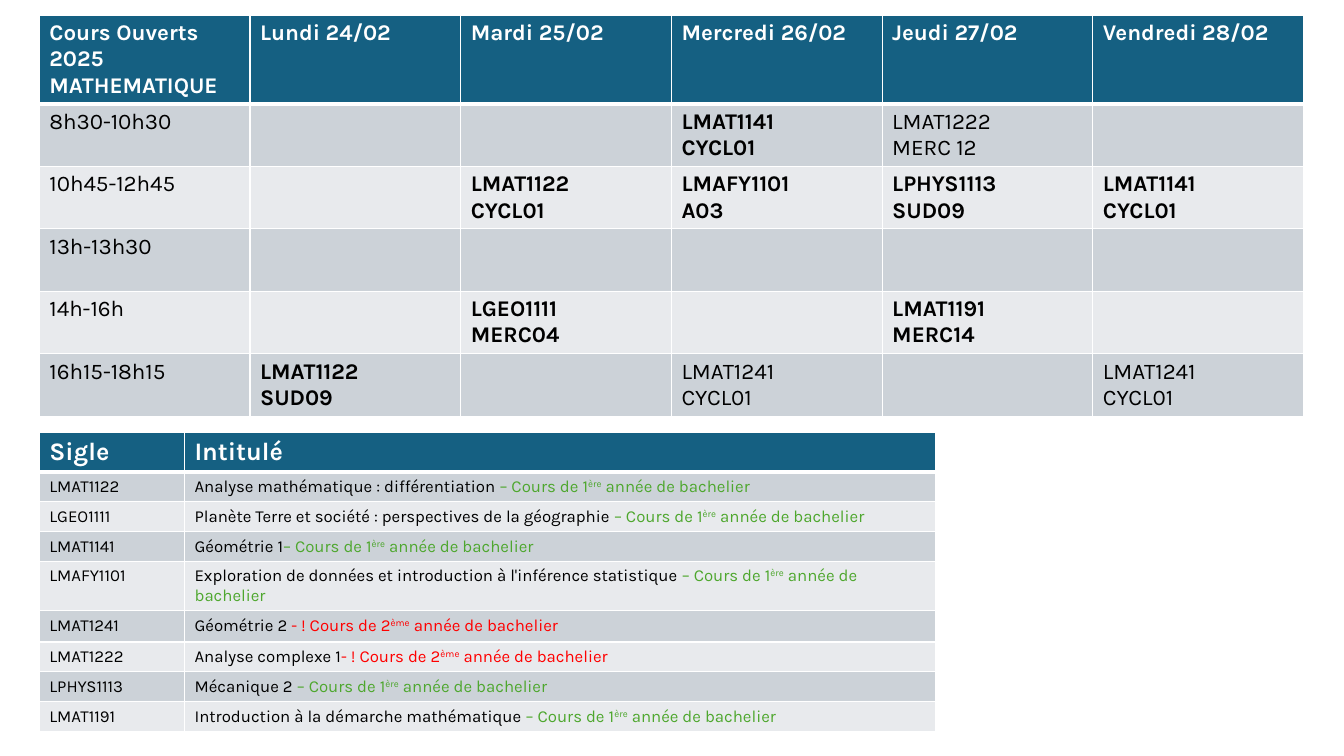
from copy import deepcopy

from lxml.etree import SubElement
from pptx import Presentation
from pptx.dml.color import RGBColor
from pptx.oxml.ns import qn
from pptx.util import Inches, Pt

FONT = "Karla"
BLACK, WHITE, GREEN, RED = "000000", "FFFFFF", "4EA72E", "FF0000"
HEADER_FILL, BAND_FILLS = "156082", ("CCD2D8", "E8EAED")
SECOND_YEAR = {"LMAT1222", "LMAT1241"}

DAYS = ["Cours Ouverts 2025\nMATHEMATIQUE", "Lundi 24/02", "Mardi 25/02",
        "Mercredi 26/02", "Jeudi 27/02", "Vendredi 28/02"]
SCHEDULE = [
    ("8h30-10h30", {3: ("LMAT1141", "CYCL01"), 4: ("LMAT1222", "MERC 12")}),
    ("10h45-12h45", {2: ("LMAT1122", "CYCL01"), 3: ("LMAFY1101", "A03"),
                     4: ("LPHYS1113", "SUD09"), 5: ("LMAT1141", "CYCL01")}),
    ("13h-13h30", {}),
    ("14h-16h", {2: ("LGEO1111", "MERC04"), 4: ("LMAT1191", "MERC14")}),
    ("16h15-18h15", {1: ("LMAT1122", "SUD09"), 3: ("LMAT1241", "CYCL01"),
                     5: ("LMAT1241", "CYCL01")}),
]
COURSES = [
    ("LMAT1122", "Analyse mathématique : différentiation "),
    ("LGEO1111", "Planète Terre et société : perspectives de la géographie "),
    ("LMAT1141", "Géométrie 1"),
    ("LMAFY1101", "Exploration de données et introduction à l'inférence statistique "),
    ("LMAT1241", "Géométrie 2 "),
    ("LMAT1222", "Analyse complexe 1"),
    ("LPHYS1113", "Mécanique 2 "),
    ("LMAT1191", "Introduction à la démarche mathématique "),
]


def rgb(value):
    """Turn a hex string into a colour."""
    return RGBColor.from_string(value)


def add_text(para, text, size=16, color=BLACK, bold=False, baseline=0):
    """Append formatted text to a paragraph and return its span."""
    span = para.add_run()
    span.text = text
    span.font.name = FONT
    span.font.size = Pt(size)
    span.font.bold = bold
    span.font.color.rgb = rgb(color)
    if baseline:
        span.font._rPr.set("baseline", str(baseline * 1000))
    return span


def add_break(para, span):
    """Append a line break that has the format of the span."""
    para.add_line_break()
    para._p[-1].append(deepcopy(span.font._rPr))


def style_cell(cell, fill, top=1, bottom=1):
    """Give a cell white borders and a solid fill."""
    properties = cell._tc.get_or_add_tcPr()
    for side, width in (("L", 1), ("R", 1), ("T", top), ("B", bottom)):
        line = SubElement(properties, qn(f"a:ln{side}"), w=str(Pt(width)))
        SubElement(SubElement(line, qn("a:solidFill")), qn("a:srgbClr"), val=WHITE)
    cell.fill.solid()
    cell.fill.fore_color.rgb = rgb(fill)


def add_grid(slide, left, top, widths, heights):
    """Add a table with a dark header row and banded body rows."""
    frame = slide.shapes.add_table(
        len(heights), len(widths), Inches(left), Inches(top),
        Inches(sum(widths)), Inches(sum(heights)))
    table = frame.table
    for column, width in zip(table.columns, widths):
        column.width = Inches(width)
    for number, (row, height) in enumerate(zip(table.rows, heights)):
        row.height = Inches(height)
        for cell in row.cells:
            if number == 0:
                style_cell(cell, HEADER_FILL, bottom=3)
            else:
                style_cell(cell, BAND_FILLS[(number - 1) % 2], top=3 if number == 1 else 1)
    return table


def fill_header(table, titles, size):
    """Write the header titles, one paragraph for each line."""
    for column, title in enumerate(titles):
        box = table.cell(0, column).text_frame
        for number, line in enumerate(title.split("\n")):
            para = box.add_paragraph() if number else box.paragraphs[0]
            add_text(para, line, size=size, color=WHITE, bold=True)


def first_para(table, row, column):
    """Return the first paragraph of a cell."""
    return table.cell(row, column).text_frame.paragraphs[0]


def add_schedule(slide):
    """Add the timetable of the week."""
    table = add_grid(slide, 0.39, 0.15, [2.09] * 6, [0.81] + [0.62] * 5)
    fill_header(table, DAYS, 16)
    for row, (hours, lessons) in enumerate(SCHEDULE, 1):
        add_text(first_para(table, row, 0), hours)
        for column, (code, room) in lessons.items():
            para = first_para(table, row, column)
            bold = code not in SECOND_YEAR
            span = add_text(para, code, bold=bold)
            add_break(para, span)
            add_text(para, room, bold=bold)


def add_courses(slide):
    """Add the list of course codes and titles."""
    heights = [0.31 if code == "LMAT1241" else 0.27 for code, _ in COURSES]
    table = add_grid(slide, 0.39, 4.29, [1.44, 7.45], [0.27] + heights)
    fill_header(table, ["Sigle", "Intitulé"], 18)
    for row, (code, title) in enumerate(COURSES, 1):
        add_text(first_para(table, row, 0), code, size=12)
        para = first_para(table, row, 1)
        add_text(para, title, size=12)
        if code in SECOND_YEAR:
            note, suffix, color = "- ! Cours de 2", "ème", RED
        else:
            note, suffix, color = "– Cours de 1", "ère", GREEN
        add_text(para, note, size=12, color=color)
        add_text(para, suffix, size=12, color=color, baseline=30)
        add_text(para, " année de bachelier", size=12, color=color)


def main():
    """Build the slide and save the deck."""
    deck = Presentation()
    deck.slide_width, deck.slide_height = Inches(13.33), Inches(7.5)
    page = deck.slides.add_slide(deck.slide_layouts[6])
    add_schedule(page)
    add_courses(page)
    deck.save("out.pptx")


if __name__ == "__main__":
    main()
